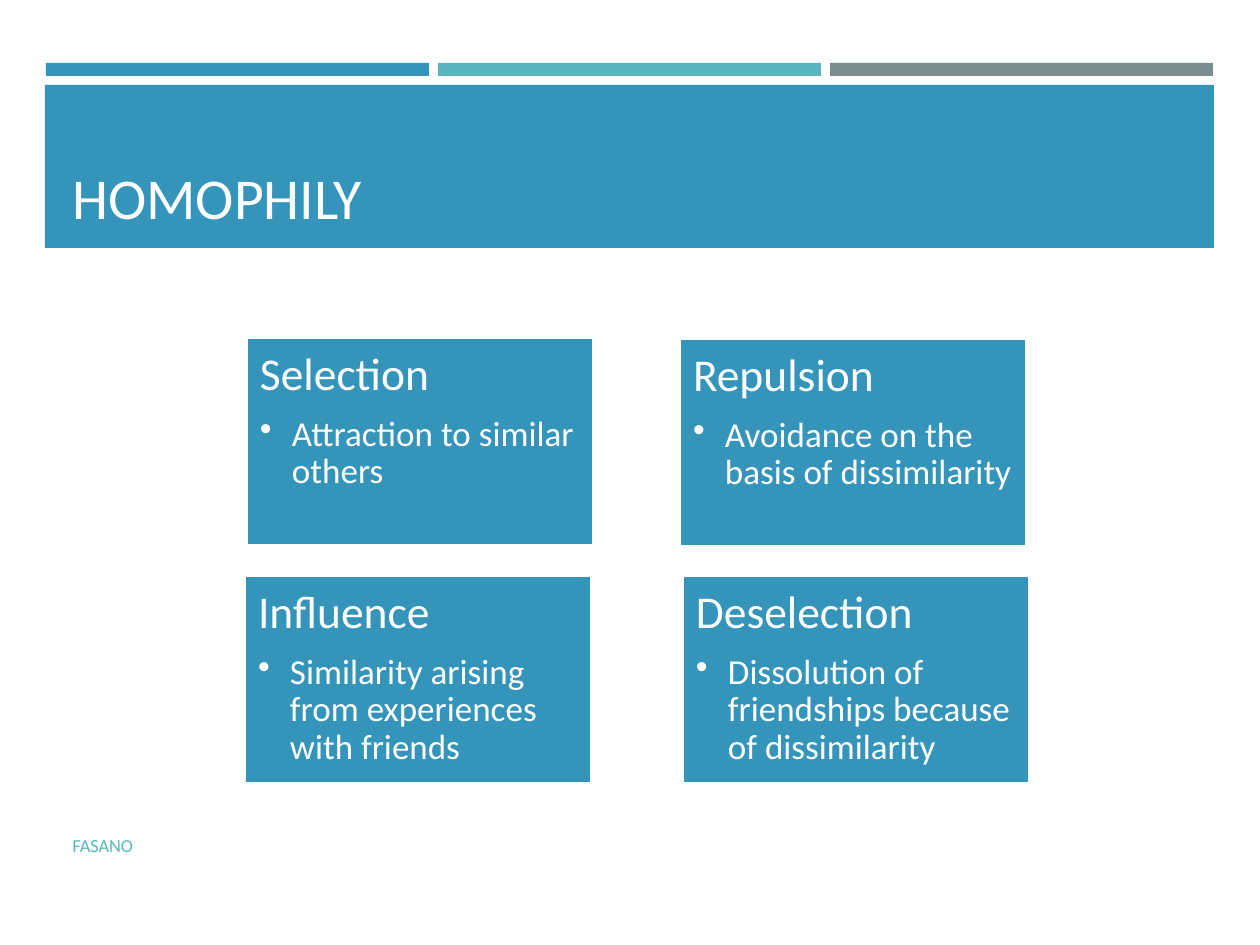
from lxml import etree
from pptx import Presentation
from pptx import util as u
from pptx.dml.color import RGBColor
from pptx.enum import shapes, text
from pptx.oxml.ns import qn

SCALE = 914400 / 126
COLORS = {"blue": "3494BA", "teal": "58B6C0", "gray": "7A8C8E", "white": "FFFFFF"}


def px(n):
    return u.Emu(round(n * SCALE))


def add_rect(x, y, w, h, color):
    sp = s.shapes.add_shape(shapes.MSO_SHAPE.RECTANGLE, px(x), px(y), px(w), px(h))
    sp.shadow.inherit = False
    sp.fill.solid()
    sp.fill.fore_color.rgb = RGBColor.from_string(COLORS[color])
    sp.line.fill.background()
    return sp


prs = Presentation()
prs.slide_width, prs.slide_height = px(1260), px(945)
s = prs.slides.add_slide(prs.slide_layouts[6])

for i, color in enumerate(["blue", "teal", "gray"]):
    add_rect(46 + i * 392, 63, 383, 13, color)
add_rect(45, 85, 1169, 163, "blue")

labels = [
    ("HOMOPHILY", 97, 1140, 140, 33, "white", text.MSO_ANCHOR.BOTTOM),
    ("FASANO", 820, 714, 50, 10.5, "teal", text.MSO_ANCHOR.MIDDLE),
]
for label, y, w, h, size, color, anchor in labels:
    tf = s.shapes.add_textbox(px(60), px(y), px(w), px(h)).text_frame
    tf.word_wrap = True
    tf.vertical_anchor = anchor
    tf.text = label
    r = tf.paragraphs[0].runs[0]
    r.font.name = "Calibri"
    r.font.size = u.Pt(size)
    r.font.color.rgb = RGBColor.from_string(COLORS[color])

cards = [
    (246, 337, "Selection", "Attraction to similar others"),
    (679, 338, "Repulsion", "Avoidance on the basis of dissimilarity"),
    (244, 575, "Influence", "Similarity arising from experiences with friends"),
    (682, 575, "Deselection", "Dissolution of friendships because of dissimilarity"),
]
for x, y, heading, detail in cards:
    sp = add_rect(x, y, 348, 209, "blue")
    sp.line.color.rgb = RGBColor.from_string(COLORS["white"])
    sp.line.width = u.Pt(1.75)
    tf = sp.text_frame
    tf.word_wrap = True
    tf.vertical_anchor = text.MSO_ANCHOR.TOP
    tf.margin_left = tf.margin_right = tf.margin_top = tf.margin_bottom = px(14)
    tf.text = f"{heading}\n{detail}"
    for p, size, after in zip(tf.paragraphs, (26, 20), (9, 3)):
        p.alignment = text.PP_ALIGN.LEFT
        p.line_spacing = 0.9
        p.space_after = u.Pt(after)
        r = p.runs[0]
        r.font.name = "Calibri"
        r.font.size = u.Pt(size)
        r.font.color.rgb = RGBColor.from_string(COLORS["white"])
    p = tf.paragraphs[1]
    p.level = 1
    pPr = p._p.get_or_add_pPr()
    pPr.set("marL", str(px(32)))
    pPr.set("indent", str(px(-32)))
    etree.SubElement(pPr, qn("a:buChar")).set("char", "•")

prs.save("out.pptx")
